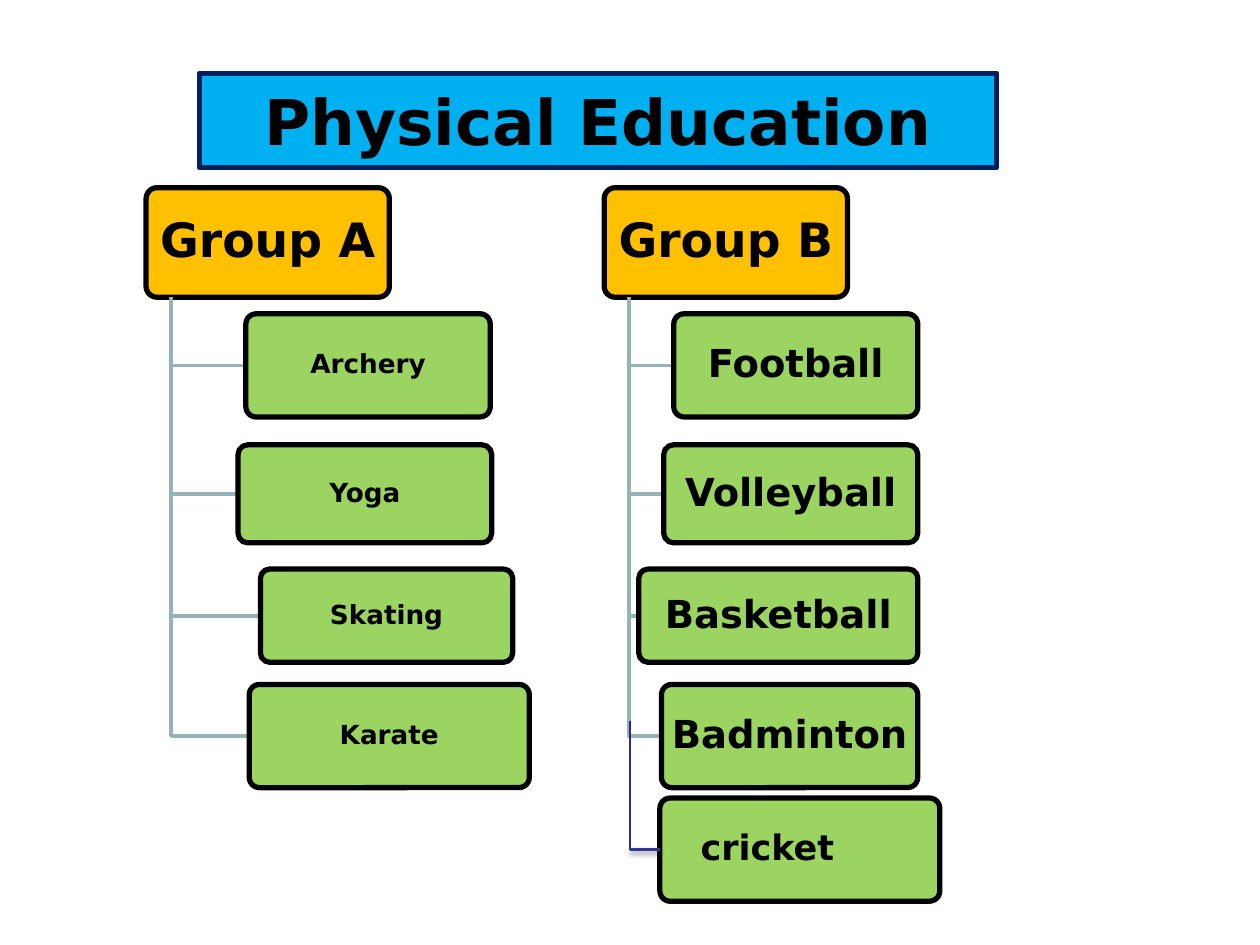
from dataclasses import dataclass
from typing import NamedTuple, Optional

from lxml import etree
from pptx import Presentation
from pptx.dml.color import RGBColor
from pptx.enum.shapes import MSO_CONNECTOR, MSO_SHAPE
from pptx.enum.text import MSO_ANCHOR, MSO_AUTO_SIZE, PP_ALIGN
from pptx.oxml import parse_xml
from pptx.oxml.ns import nsdecls, qn
from pptx.util import Pt

ROUNDED = MSO_SHAPE.ROUNDED_RECTANGLE
STRAIGHT = MSO_CONNECTOR.STRAIGHT
MIDDLE = MSO_ANCHOR.MIDDLE
CENTER = PP_ALIGN.CENTER


@dataclass(frozen=True)
class Theme:
    font: str = "DejaVu Sans"
    ink: str = "000000"
    banner: str = "00B0F0"
    banner_edge: str = "002060"
    group: str = "FFC000"
    sport: str = "92D050"
    branch: str = "96B3B6"
    drop: str = "2A2A89"
    side: str = "333399"
    title_size: float = 36
    group_size: float = 27
    edge: float = 3
    branch_width: float = 2
    sport_opacity: int = 90


THEME = Theme()


class Area(NamedTuple):
    left: float
    top: float
    width: float
    height: float

    @property
    def middle(self) -> float:
        return self.top + self.height / 2


class Sport(NamedTuple):
    name: str
    left: float
    right: float


@dataclass(frozen=True)
class Group:
    name: str
    left: float
    sport_size: float
    sports: list[Sport]


GROUP_TOP, GROUP_WIDTH, GROUP_HEIGHT = 107.3, 139, 62.6
TRUNK_INSET = 14.2
ROWS = [(179.3, 59), (254.2, 56), (325.2, 53.3), (391.1, 59)]  # top, height
B_RIGHT = 524.5

GROUPS = [
    Group("Group A", 83.5, 15, [
        Sport("Archery", 140.5, 280.2), Sport("Yoga", 136, 281),
        Sport("Skating", 148.8, 293), Sport("Karate", 142.4, 302.5)]),
    Group("Group B", 345.3, 22, [
        Sport("Football", 385, B_RIGHT), Sport("Volleyball", 379.3, B_RIGHT),
        Sport("Basketball", 365, B_RIGHT), Sport("Badminton", 378, B_RIGHT)]),
]
BANNER = Area(113.8, 41.8, 455.8, 54)
CRICKET = Area(377.1, 456, 160, 59)
CRICKET_SHIFT = 37  # extra right margin that moves the word left


def paint(shape, fill: str, edge: str) -> None:
    shape.fill.solid()
    shape.fill.fore_color.rgb = RGBColor.from_string(fill)
    shape.line.color.rgb = RGBColor.from_string(edge)
    shape.line.width = Pt(THEME.edge)
    shape.shadow.inherit = False


def write(shape, text: str, size: float) -> None:
    frame = shape.text_frame
    frame.text = text
    frame.vertical_anchor = MIDDLE
    para = frame.paragraphs[0]
    para.alignment = CENTER
    para.font.name = THEME.font
    para.font.size = Pt(size)
    para.font.bold = True
    para.font.color.rgb = RGBColor.from_string(THEME.ink)


def add_box(page, area: Area, text: str, size: float, fill: str,
            opacity: Optional[int] = None, shift: float = 0) -> None:
    box = page.shapes.add_shape(ROUNDED, *map(Pt, area))
    box.adjustments[0] = 0.1
    paint(box, fill, THEME.ink)
    if opacity is not None:
        color = box.fill._xPr.find(qn("a:solidFill"))[0]
        etree.SubElement(color, qn("a:alpha"), val=str(opacity * 1000))
    write(box, text, size)
    frame = box.text_frame
    frame.word_wrap = True
    frame.margin_left, frame.margin_right = Pt(2), Pt(2 + shift)
    frame.margin_top = frame.margin_bottom = Pt(2)
    frame.paragraphs[0].line_spacing = 0.9


def add_branch(page, trunk: float, top: float, box: Area) -> None:
    builder = page.shapes.build_freeform(Pt(trunk), Pt(top))
    builder.add_line_segments(
        [(Pt(trunk), Pt(box.middle)), (Pt(box.left), Pt(box.middle))], close=False)
    branch = builder.convert_to_shape()
    branch.fill.background()
    branch.line.color.rgb = RGBColor.from_string(THEME.branch)
    branch.line.width = Pt(THEME.branch_width)
    branch.shadow.inherit = False


def add_line(page, start: tuple, end: tuple, color: str, width: float,
             shadow: bool = False) -> None:
    line = page.shapes.add_connector(STRAIGHT, *map(Pt, start + end))
    line.line.color.rgb = RGBColor.from_string(color)
    line.line.width = Pt(width)
    effects = etree.SubElement(line._element.spPr, qn("a:effectLst"))
    if shadow:
        effects.append(parse_xml(
            f'<a:outerShdw {nsdecls("a")} blurRad="{Pt(3.1)}" dist="{Pt(1.6)}" '
            'dir="5400000" rotWithShape="0"><a:srgbClr val="000000">'
            '<a:alpha val="38000"/></a:srgbClr></a:outerShdw>'))


def add_banner(page, area: Area, text: str) -> None:
    title = page.shapes.title
    title.left, title.top, title.width, title.height = map(Pt, area)
    # Turn the title placeholder into a scroll
    title._element.spPr.append(parse_xml(
        f'<a:prstGeom {nsdecls("a")} prst="horizontalScroll"><a:avLst>'
        '<a:gd name="adj" fmla="val 12700"/></a:avLst></a:prstGeom>'))
    paint(title, THEME.banner, THEME.banner_edge)
    write(title, text, THEME.title_size)
    title.text_frame.auto_size = MSO_AUTO_SIZE.NONE


def add_group(page, group: Group) -> None:
    head = Area(group.left, GROUP_TOP, GROUP_WIDTH, GROUP_HEIGHT)
    add_box(page, head, group.name, THEME.group_size, THEME.group)
    for sport, (top, height) in zip(group.sports, ROWS):
        area = Area(sport.left, top, sport.right - sport.left, height)
        add_branch(page, group.left + TRUNK_INSET, head.top + head.height, area)
        add_box(page, area, sport.name, group.sport_size, THEME.sport,
                THEME.sport_opacity)


def main() -> None:
    deck = Presentation()
    deck.slide_width, deck.slide_height = Pt(720), Pt(540)
    page = deck.slides.add_slide(deck.slide_layouts[5])

    # Title and the two trees
    add_banner(page, BANNER, "Physical Education")
    for group in GROUPS:
        add_group(page, group)

    # Extra sport, hung below the second tree
    add_box(page, CRICKET, "cricket", 20, THEME.sport, THEME.sport_opacity,
            CRICKET_SHIFT)
    corner = (360, CRICKET.middle)
    add_line(page, (360, 412), corner, THEME.drop, 0.75)
    add_line(page, corner, (CRICKET.left, CRICKET.middle), THEME.side,
             THEME.branch_width, shadow=True)

    deck.save("out.pptx")


if __name__ == "__main__":
    main()
